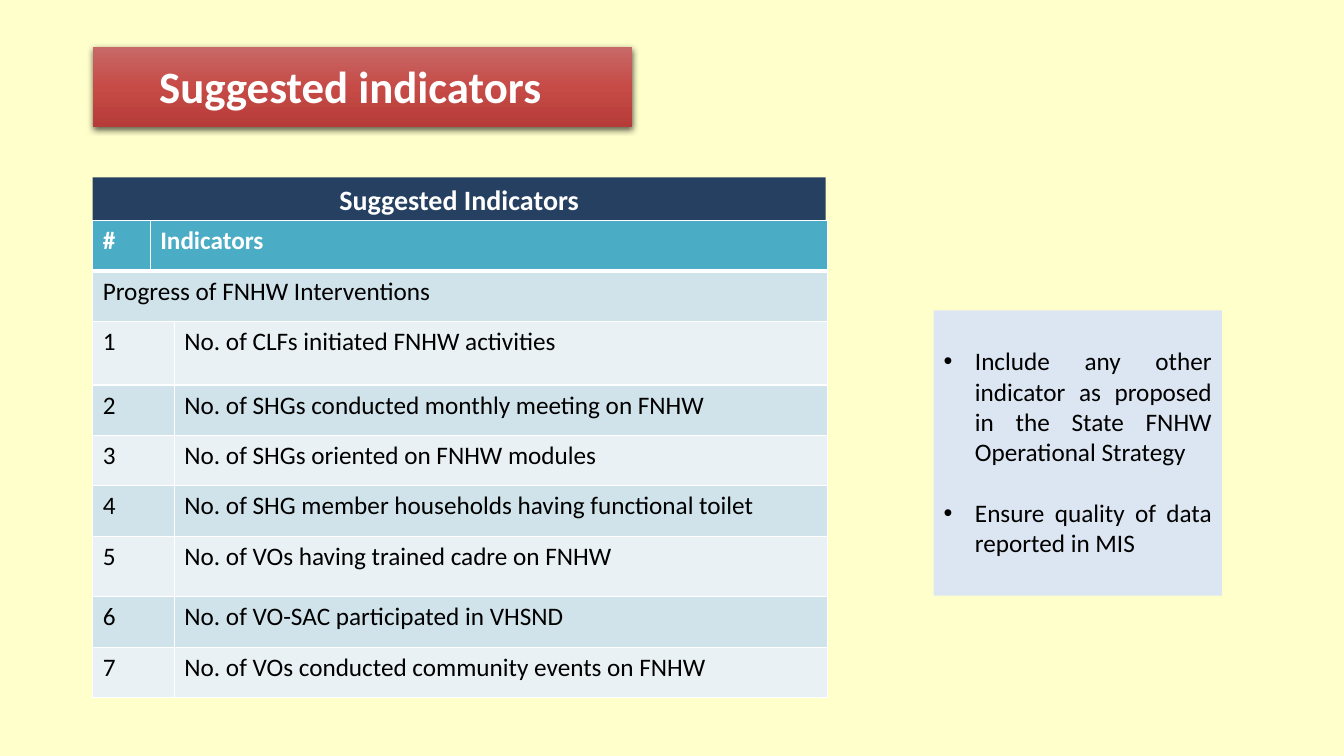
from lxml import etree
from pptx import Presentation
from pptx.dml.color import RGBColor
from pptx.enum.shapes import MSO_SHAPE
from pptx.enum.text import MSO_ANCHOR, MSO_AUTO_SIZE, PP_ALIGN
from pptx.oxml.ns import qn
from pptx.util import Inches, Pt

RECT = MSO_SHAPE.RECTANGLE
CENTER, JUSTIFY, LEFT = PP_ALIGN.CENTER, PP_ALIGN.JUSTIFY, PP_ALIGN.LEFT
TOP, MIDDLE = MSO_ANCHOR.TOP, MSO_ANCHOR.MIDDLE
NO_AUTOFIT = MSO_AUTO_SIZE.NONE

TITLE = "Suggested indicators"
TABLE_TITLE = "Suggested Indicators"
HEADER = ("#", "Indicators")
SECTION = "Progress of FNHW Interventions"
INDICATORS = [
    "No. of CLFs initiated FNHW activities",
    "No. of SHGs conducted monthly meeting on FNHW",
    "No. of SHGs oriented on FNHW modules",
    "No. of SHG member households having functional toilet",
    "No. of VOs having trained cadre on FNHW",
    "No. of VO-SAC participated in VHSND",
    "No. of VOs conducted community events on FNHW",
]
NOTES = [
    "Include any other indicator as proposed in the State FNHW Operational Strategy",
    "Ensure quality of data reported in MIS",
]

THEME = {
    "font": "Calibri", "title": 32, "heading": 20, "body": 18,
    "page": "FFFFCC", "white": "FFFFFF", "black": "000000",
    "navy": "254061", "teal": "4BACC6", "note": "DCE6F2",
    "bands": ("D0E3EA", "E9F1F5"),
    "banner": ((0, "C76967"), (50, "C64B47"), (100, "B63C39")),
}

LEFT_EDGE = 0.92
COLUMNS = (0.57, 0.22, 6.48)
ROW_HEIGHT = 0.5
TALL_ROWS = {2: 0.63, 6: 0.6}


def rgb(value):
    return RGBColor.from_string(value)


def box(*lengths):
    return [Inches(v) for v in lengths]


def place(shape, *lengths):
    shape.left, shape.top, shape.width, shape.height = box(*lengths)


def paint(shape, color):
    shape.fill.solid()
    shape.fill.fore_color.rgb = rgb(color)


def style(p, size, color, bold=False, align=LEFT):
    p.alignment = align
    for r in p.runs:
        r.font.name = THEME["font"]
        r.font.size = Pt(size)
        r.font.bold = bold
        r.font.color.rgb = rgb(color)


def add_rect(s, *lengths):
    sp = s.shapes.add_shape(RECT, *box(*lengths))
    sp.shadow.inherit = False
    sp.line.fill.background()
    return sp


def add_color(parent, color):
    return etree.SubElement(parent, qn("a:srgbClr"), val=color)


def add_banner(s):
    sp = add_rect(s, LEFT_EDGE, 0.47, 5.35, 0.79)
    sp.fill.gradient()
    sp.fill.gradient_angle = 270
    stops = sp.element.spPr.find(".//" + qn("a:gsLst"))
    for stop in list(stops):
        stops.remove(stop)
    for position, color in THEME["banner"]:
        add_color(etree.SubElement(stops, qn("a:gs"), pos=str(position * 1000)), color)
    effects = sp.element.spPr.find(qn("a:effectLst"))
    shadow = etree.SubElement(effects, qn("a:outerShdw"), blurRad=str(Pt(4.5)),
                              dist=str(Pt(1.5)), dir="5400000", rotWithShape="0")
    etree.SubElement(add_color(shadow, THEME["black"]), qn("a:alpha"), val="63000")
    return sp


def add_borders(cell, top, bottom):
    tc_pr = cell._tc.get_or_add_tcPr()
    for i, (side, width) in enumerate(zip("LRTB", (1, 1, top, bottom))):
        ln = etree.Element(qn("a:ln" + side), w=str(Pt(width)))
        add_color(etree.SubElement(ln, qn("a:solidFill")), THEME["white"])
        tc_pr.insert(i, ln)


def add_indicator_table(s):
    rows = [(HEADER[0], HEADER[1], ""), (SECTION, "", "")]
    rows += [(str(n), "", text) for n, text in enumerate(INDICATORS, 1)]
    heights = [TALL_ROWS.get(i, ROW_HEIGHT) for i in range(len(rows))]
    table = s.shapes.add_table(len(rows), len(COLUMNS), *box(
        LEFT_EDGE, 2.19, sum(COLUMNS), sum(heights))).table
    for column, width in zip(table.columns, COLUMNS):
        column.width = Inches(width)
    for i, texts in enumerate(rows):
        table.rows[i].height = Inches(heights[i])
        header = i == 0
        for j, text in enumerate(texts):
            cell = table.cell(i, j)
            cell.text = text
            paint(cell, THEME["teal"] if header else THEME["bands"][(i - 1) % 2])
            add_borders(cell, 3 if i == 1 else 1, 3 if header else 1)
            style(cell.text_frame.paragraphs[0], THEME["body"],
                  THEME["white"] if header else THEME["black"], header)
        first, last = {0: (1, 2), 1: (0, 2)}.get(i, (0, 1))
        table.cell(i, first).merge(table.cell(i, last))


def fill_title(s):
    title = s.shapes.title
    place(title, 0.69, 0.6, 5.47, 0.57)
    tf = title.text_frame
    tf.text = TITLE
    tf.auto_size = NO_AUTOFIT
    tf.vertical_anchor = MIDDLE
    tf.margin_left = Inches(0.2)
    p = tf.paragraphs[0]
    p.line_spacing = 0.9
    style(p, THEME["title"], THEME["white"], True, CENTER)
    title.element.addprevious(add_banner(s).element)


def fill_notes(s):
    body = s.placeholders[1]
    place(body, 9.26, 3.08, 2.86, 2.83)
    paint(body, THEME["note"])
    tf = body.text_frame
    tf.text = "\n".join(NOTES)
    tf.auto_size = NO_AUTOFIT
    tf.vertical_anchor = TOP
    tf.margin_top = Inches(0.35)
    for i, p in enumerate(tf.paragraphs):
        p.space_before = Pt(22 if i else 0)
        style(p, THEME["body"], THEME["black"], align=JUSTIFY)
        p_pr = p._p.get_or_add_pPr()
        p_pr.set("marL", str(Inches(0.31)))
        p_pr.set("indent", str(Inches(-0.31)))


def main():
    prs = Presentation()
    prs.slide_width, prs.slide_height = box(13.33, 7.5)
    s = prs.slides.add_slide(prs.slide_layouts[1])
    paint(s.background, THEME["page"])

    heading = add_rect(s, LEFT_EDGE, 1.76, sum(COLUMNS), 0.43)
    paint(heading, THEME["navy"])
    heading.text_frame.text = TABLE_TITLE
    style(heading.text_frame.paragraphs[0], THEME["heading"], THEME["white"], True, CENTER)

    add_indicator_table(s)
    fill_notes(s)
    fill_title(s)
    prs.save("out.pptx")


if __name__ == "__main__":
    main()
